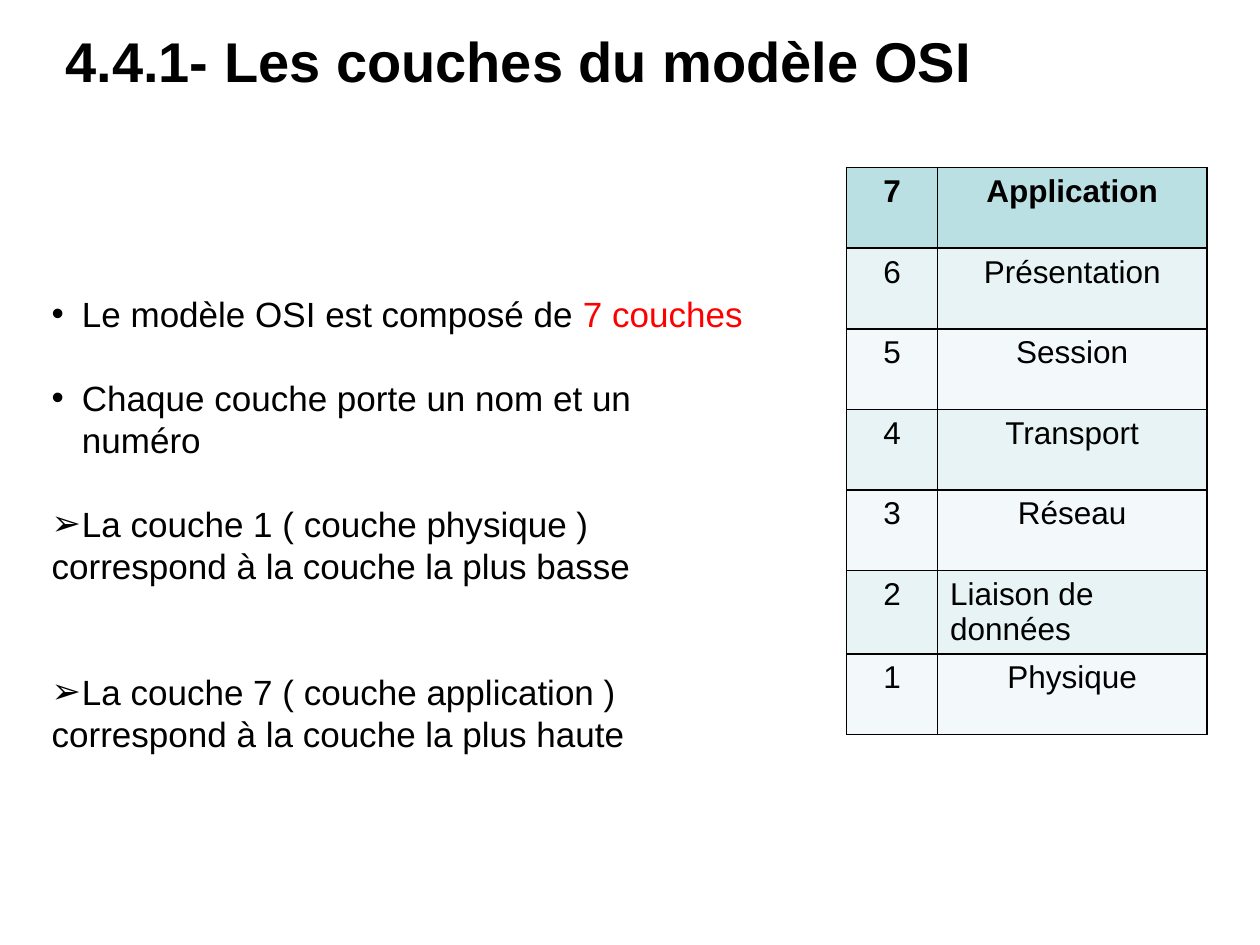
from pptx import Presentation
from pptx.dml.color import RGBColor
from pptx.enum.text import MSO_ANCHOR, MSO_AUTO_SIZE, PP_ALIGN
from pptx.oxml.ns import qn
from pptx.util import Inches, Pt
from lxml.etree import SubElement

FONT = "Arial"
BLACK, RED = "000000", "FF0000"
HEADER_FILL, BAND_FILLS = "BBE0E3", ("E7F3F4", "F3F9FA")
LINE_HEIGHT = 24
BULLET_INDENT = 0.24

LAYERS = ["Application", "Présentation", "Session", "Transport",
          "Réseau", "Liaison de données", "Physique"]

# Bullet, blank lines above, coloured spans
POINTS = [
    ("•", 0, [("Le modèle OSI est composé de ", BLACK), ("7 couches", RED)]),
    ("•", 1, [("Chaque couche porte un nom et un numéro", BLACK)]),
    ("➢", 1, [("La couche 1 ( couche physique )", BLACK)]),
    (None, 0, [("correspond à la couche la plus basse", BLACK)]),
    ("➢", 2, [("La couche 7 ( couche application )", BLACK)]),
    (None, 0, [("correspond à la couche la plus haute", BLACK)]),
]


def color(value):
    return RGBColor.from_string(value)


def add_span(para, text, size, fill=BLACK, bold=False):
    span = para.add_run()
    span.text = text
    span.font.name = FONT
    span.font.size = Pt(size)
    span.font.bold = bold
    span.font.color.rgb = color(fill)


def place(box, left, top, width, height):
    box.left, box.top = Inches(left), Inches(top)
    box.width, box.height = Inches(width), Inches(height)
    frame = box.text_frame
    frame.word_wrap = True
    frame.auto_size = MSO_AUTO_SIZE.NONE
    frame.vertical_anchor = MSO_ANCHOR.TOP
    return frame


def set_bullet(para, bullet):
    properties = para._p.get_or_add_pPr()
    indent = Inches(BULLET_INDENT) if bullet else 0
    # Arrow points have no hanging text edge beyond their own line
    properties.set("marL", str(indent))
    properties.set("indent", str(-indent))
    if bullet:
        SubElement(properties, qn("a:buFont"), typeface=FONT)
        SubElement(properties, qn("a:buChar"), char=bullet)
    else:
        SubElement(properties, qn("a:buNone"))


def add_title(page):
    frame = place(page.shapes.title, 0.42, 0.16, 7.82, 0.64)
    para = frame.paragraphs[0]
    para.alignment = PP_ALIGN.LEFT
    add_span(para, "4.4.1- Les couches du modèle OSI", 32, bold=True)


def add_points(page):
    frame = place(page.placeholders[1], 0.31, 2.27, 5.76, 4.14)
    for index, (bullet, blank_lines, spans) in enumerate(POINTS):
        para = frame.paragraphs[0] if index == 0 else frame.add_paragraph()
        set_bullet(para, bullet)
        para.alignment = PP_ALIGN.LEFT
        para.line_spacing = Pt(LINE_HEIGHT)
        para.space_before = Pt(blank_lines * LINE_HEIGHT)
        for text, fill in spans:
            add_span(para, text, 20, fill)


def set_borders(cell):
    properties = cell._tc.get_or_add_tcPr()
    for side in ("lnL", "lnR", "lnT", "lnB"):
        line = SubElement(properties, qn(f"a:{side}"), w=str(Pt(1)))
        fill = SubElement(line, qn("a:solidFill"))
        SubElement(fill, qn("a:srgbClr"), val=BLACK)


def fill_cell(cell, text, fill, bold, alignment):
    set_borders(cell)
    cell.fill.solid()
    cell.fill.fore_color.rgb = color(fill)
    para = cell.text_frame.paragraphs[0]
    para.alignment = alignment
    add_span(para, text, 18, bold=bold)


def add_layer_table(page):
    widths, row_height = (0.72, 2.14), 0.64
    count = len(LAYERS)
    table = page.shapes.add_table(
        count, len(widths), Inches(6.72), Inches(1.33),
        Inches(sum(widths)), Inches(count * row_height)).table
    for column, width in zip(table.columns, widths):
        column.width = Inches(width)
    for index, name in enumerate(LAYERS):
        table.rows[index].height = Inches(row_height)
        header = index == 0
        fill = HEADER_FILL if header else BAND_FILLS[(index - 1) % 2]
        # The one name that takes two lines is set flush left
        name_alignment = PP_ALIGN.LEFT if " " in name else PP_ALIGN.CENTER
        fill_cell(table.cell(index, 0), str(count - index), fill, header,
                  PP_ALIGN.CENTER)
        fill_cell(table.cell(index, 1), name, fill, header, name_alignment)


def main():
    deck = Presentation()
    deck.slide_width, deck.slide_height = Inches(10), Inches(7.5)
    page = deck.slides.add_slide(deck.slide_layouts[1])
    add_layer_table(page)
    add_points(page)
    add_title(page)
    deck.save("out.pptx")


if __name__ == "__main__":
    main()
